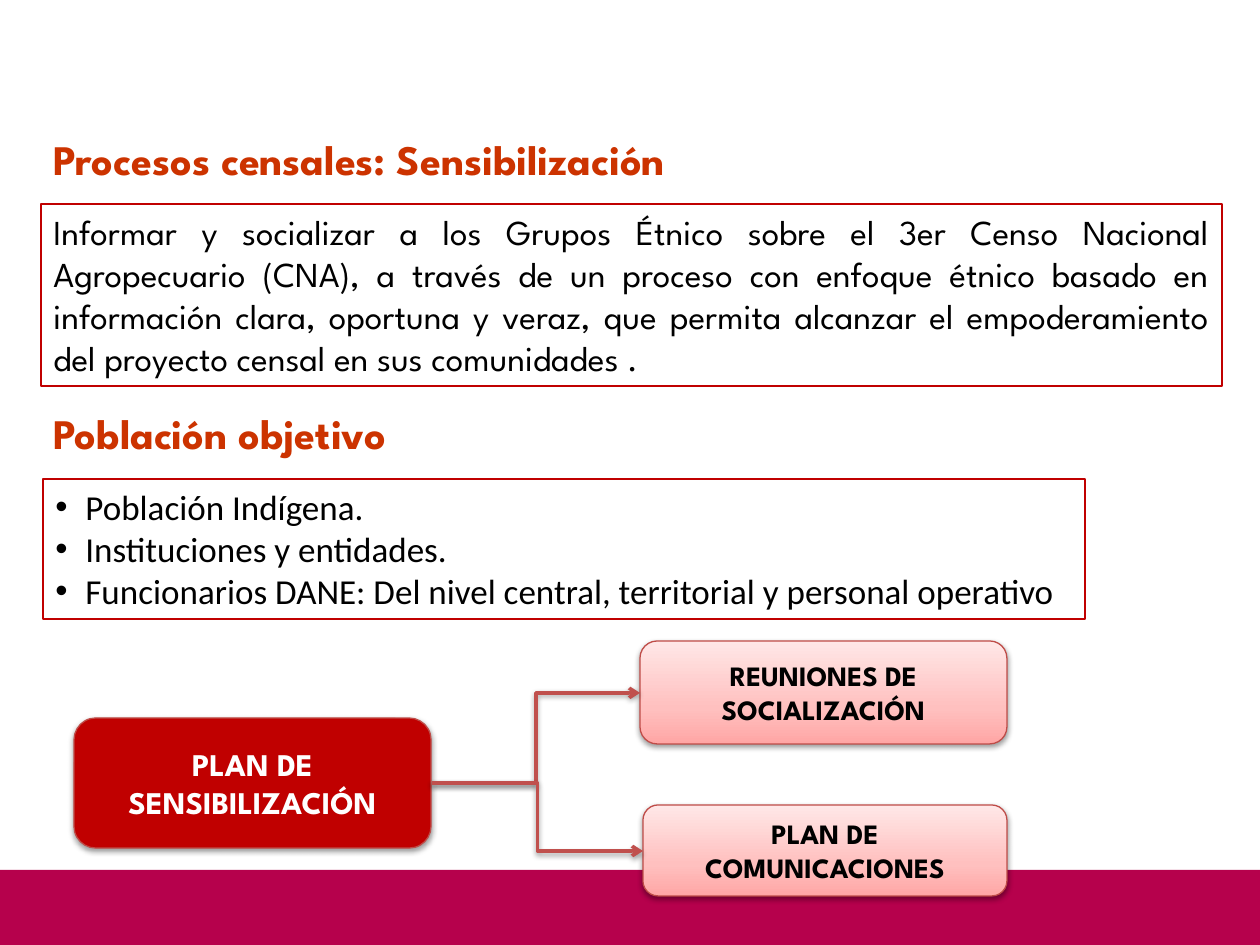
import lxml.etree
import pptx
import pptx.dml.color
import pptx.enum.shapes
import pptx.enum.text
import pptx.oxml
import pptx.oxml.ns
import pptx.util

PX = 914400 / 126
HEADING_FONT = "League Spartan"
BODY_FONT = "Calibri"
COLORS = {
    "band": "B6014C",
    "heading": "CC3300",
    "frame": "C00000",
    "edge": "BF4C48",
    "arrow": "C0504D",
    "black": "000000",
    "white": "FFFFFF",
}
PINK_STOPS = [(0, "FFA6A5"), (35, "FFC0BF"), (100, "FFE7E7")]
SHAPES = pptx.enum.shapes.MSO_SHAPE
ALIGN = pptx.enum.text.PP_ALIGN
ANCHOR = pptx.enum.text.MSO_ANCHOR
qn = pptx.oxml.ns.qn


def px(value):
    return pptx.util.Emu(round(value * PX))


def color(name):
    return pptx.dml.color.RGBColor.from_string(COLORS[name])


def add_child(parent, tag, **attributes):
    child = lxml.etree.SubElement(parent, qn(tag))
    for key, value in attributes.items():
        child.set(key, str(value))
    return child


def add_shadow(properties):
    """Put a soft shadow below a shape or connector whose line is already set."""
    effects = properties.find(qn("a:effectLst"))
    if effects is None:
        effects = add_child(properties, "a:effectLst")
    shadow = add_child(effects, "a:outerShdw", blurRad=40000, dist=20000,
                       dir=5400000, rotWithShape=0)
    black = add_child(shadow, "a:srgbClr", val=COLORS["black"])
    add_child(black, "a:alpha", val=38000)


def add_bullet(para):
    properties = para._p.get_or_add_pPr()
    properties.set("marL", str(px(30)))
    properties.set("indent", str(-px(30)))
    add_child(properties, "a:buFont", typeface="Arial")
    add_child(properties, "a:buChar", char="•")


def write(box, text, size=20, font=HEADING_FONT, ink="black", bold=False,
          align=ALIGN.LEFT, anchor=ANCHOR.TOP, bullets=False):
    """Fill a box with text, one paragraph for each line."""
    frame = box.text_frame
    frame.word_wrap = True
    frame.vertical_anchor = anchor
    frame.text = text
    for para in frame.paragraphs:
        para.alignment = align
        if bullets:
            add_bullet(para)
        for span in para.runs:
            span.font.name = font
            span.font.size = pptx.util.Pt(size)
            span.font.bold = bold
            span.font.color.rgb = color(ink)


def add_heading(page, text, bounds, anchor=ANCHOR.TOP):
    box = page.shapes.add_textbox(*map(px, bounds))
    write(box, text, size=24, ink="heading", bold=True, anchor=anchor)


def add_box(page, kind, bounds, fill=None, line=None):
    box = page.shapes.add_shape(kind, *map(px, bounds))
    box.shadow.inherit = False
    if fill:
        box.fill.solid()
        box.fill.fore_color.rgb = color(fill)
    else:
        box.fill.background()
    if line:
        box.line.color.rgb = color(line)
        box.line.width = pptx.util.Pt(0.75)
    else:
        box.line.fill.background()
    return box


def fill_pink(box):
    box.fill.gradient()
    box.fill.gradient_angle = 90
    stops = box._element.spPr.find(".//" + qn("a:gsLst"))
    for stop in list(stops):
        stops.remove(stop)
    for percent, tint in PINK_STOPS:
        stop = add_child(stops, "a:gs", pos=percent * 1000)
        add_child(stop, "a:srgbClr", val=tint)


def add_plan(page, text, bounds, fill=None, size=16, ink="black"):
    """Add a rounded, shadowed box; without a fill colour it is pink."""
    box = add_box(page, SHAPES.ROUNDED_RECTANGLE, bounds, fill, "edge")
    if not fill:
        fill_pink(box)
    add_shadow(box._element.spPr)
    write(box, text, size=size, ink=ink, bold=True,
          align=ALIGN.CENTER, anchor=ANCHOR.MIDDLE)


def add_elbow_arrow(page, start, end):
    arrow = page.shapes.add_connector(
        pptx.enum.shapes.MSO_CONNECTOR.ELBOW, *map(px, start + end))
    arrow.line.color.rgb = color("arrow")
    arrow.line.width = pptx.util.Pt(2)
    add_child(arrow.line._get_or_add_ln(), "a:tailEnd", type="arrow")
    add_shadow(arrow._element.spPr)


def main():
    deck = pptx.Presentation()
    deck.slide_width, deck.slide_height = px(1260), px(945)
    page = deck.slides.add_slide(deck.slide_layouts[6])

    add_box(page, SHAPES.RECTANGLE, (0, 870, 1260, 75), fill="band")

    add_heading(page, "Procesos censales: Sensibilización", (41, 127, 1091, 64))
    purpose = add_box(page, SHAPES.RECTANGLE, (41, 204, 1181, 182), line="frame")
    write(purpose,
          "Informar y socializar a los Grupos Étnico sobre el 3er Censo "
          "Nacional Agropecuario (CNA), a través de un proceso con enfoque "
          "étnico basado en información clara, oportuna y veraz, que permita "
          "alcanzar el empoderamiento del proyecto censal en sus comunidades .",
          align=ALIGN.JUSTIFY)

    add_heading(page, "Población objetivo", (41, 387, 701, 92), ANCHOR.MIDDLE)
    audience = add_box(page, SHAPES.RECTANGLE, (43, 479, 1042, 140), line="frame")
    write(audience,
          "Población Indígena.\n"
          "Instituciones y entidades.\n"
          "Funcionarios DANE: Del nivel central, territorial y personal operativo",
          font=BODY_FONT, bullets=True)

    add_plan(page, "PLAN DE SENSIBILIZACIÓN", (74, 718, 357, 130),
             fill="frame", size=18, ink="white")
    add_plan(page, "PLAN DE COMUNICACIONES", (643, 805, 364, 91))
    add_plan(page, "REUNIONES DE SOCIALIZACIÓN", (640, 641, 367, 103))
    for end in ((640, 693), (643, 851)):
        add_elbow_arrow(page, (432, 783), end)

    deck.save("out.pptx")


if __name__ == "__main__":
    main()
